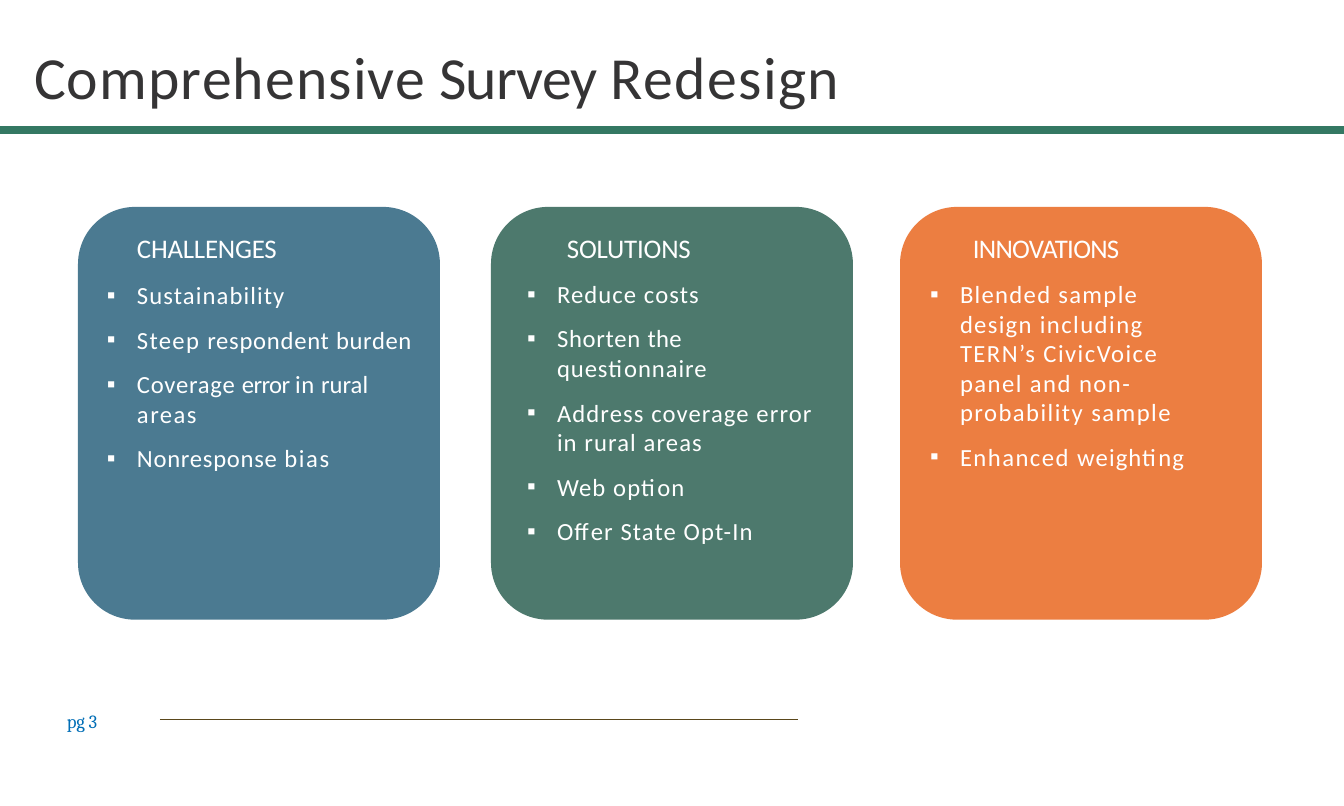
from dataclasses import dataclass

from lxml import etree
from pptx import Presentation
from pptx import util as u
from pptx.dml.color import RGBColor
from pptx.enum import shapes, text
from pptx.oxml.ns import qn


@dataclass(frozen=True)
class Theme:
    font: str = "Calibri"
    page_font: str = "Cambria"
    title_size: float = 32
    heading_size: float = 14.4
    list_size: float = 13.2
    page_size: float = 10
    ink: str = "353435"
    white: str = "FFFFFF"
    page: str = "006EB6"
    rule: str = "347863"
    footer: str = "5A471B"
    blue: str = "4B7A91"
    green: str = "4D796D"
    orange: str = "EB702D"


THEME = Theme()
PX = 914400 / 134.4
CARD_W, CARD_H, CARD_TOP, RADIUS = 362, 413, 207, 57
HEADING_TOP, LIST_TOP = 231, 278
INDENT, HANGING = 31, 30

TITLE = [("Comprehensive", 0.6), (" Survey ", -0.5), ("Redesign", 0.8)]

# Each text is a list of (words, letter spacing in points)
CARDS = [
    dict(left=78, color=THEME.blue, opacity=100,
         heading=[("CHALLENGES", -0.1)], heading_left=137,
         list_left=106, list_width=316, list_top=LIST_TOP + 1, items=[
             [("Sustainability", 0.6)],
             [("Steep ", 0.7), ("respondent ", 0.4), ("burden", 0.3)],
             [("Coverage ", 0.4), ("error ", -0.3), ("in ", 0.3),
              ("rural ", 0), ("areas", 0.8)],
             [("Nonresponse ", 0.4), ("bias", 0.9)]]),
    dict(left=491, color=THEME.green, opacity=100,
         heading=[("SOLUTIONS", -0.1)], heading_left=567,
         list_left=526, list_width=311, list_top=LIST_TOP, items=[
             [("Reduce costs", 0.6)],
             [("Shorten ", 0.4), ("the ", 0.2), ("questionnaire", 0.5)],
             [("Address coverage error in rural areas", 0.6)],
             [("Web option", 0.6)],
             [("Offer State Opt-In", 0.6)]]),
    dict(left=900, color=THEME.orange, opacity=90,
         heading=[("INNOVATIONS", -0.4)], heading_left=973,
         list_left=929, list_width=289, list_top=LIST_TOP, items=[
             [("Blended sample design ", 0.7),
              ("including TERN’s CivicVoice panel and non-probability sample",
               0.8)],
             [("Enhanced ", 0.8), ("weighting", 0.6)]]),
]


def px(n):
    return u.Emu(round(n * PX))


class SlideBuilder:
    def __init__(self, slide, theme):
        self.s = slide
        self.theme = theme
        self.bodies = [ph for ph in slide.placeholders
                       if ph.placeholder_format.idx > 0]

    def place(self, sp, x, y, w, h):
        sp.left, sp.top, sp.width, sp.height = map(px, (x, y, w, h))
        tf = sp.text_frame
        tf.word_wrap = True
        tf.auto_size = text.MSO_AUTO_SIZE.NONE
        tf.vertical_anchor = text.MSO_ANCHOR.TOP
        tf.margin_left = tf.margin_right = tf.margin_bottom = 0
        tf.margin_top = px(1)
        return tf

    def add_runs(self, p, runs, size, color, font=None):
        p.alignment = text.PP_ALIGN.LEFT
        p.space_before = u.Pt(0)
        for words, spacing in runs:
            r = p.add_run()
            r.text = words
            r.font.name = font or self.theme.font
            r.font.size = u.Pt(size)
            r.font.bold = False
            r.font.color.rgb = RGBColor.from_string(color)
            r._r.get_or_add_rPr().set("spc", str(round(spacing * 100)))

    def title(self, runs, x, y, w, h):
        p = self.place(self.s.shapes.title, x, y, w, h).paragraphs[0]
        p.line_spacing = 0.9
        self.add_runs(p, runs, self.theme.title_size, self.theme.ink)

    def label(self, runs, x, y, w, h, size, color, font=None):
        sp = self.s.shapes.add_textbox(0, 0, 0, 0)
        tf = self.place(sp, x, y, w, h)
        self.add_runs(tf.paragraphs[0], runs, size, color, font)

    def bullets(self, items, x, y, w, h):
        sp = self.bodies.pop(0)
        sp.element.getparent().append(sp.element)  # in front of its card
        tf = self.place(sp, x, y, w, h)
        for i, runs in enumerate(items):
            p = tf.paragraphs[0] if i == 0 else tf.add_paragraph()
            pPr = p._p.get_or_add_pPr()
            pPr.set("marL", str(px(INDENT)))
            pPr.set("indent", str(-px(HANGING)))
            etree.SubElement(pPr, qn("a:buChar")).set("char", "▪")
            p.line_spacing = 1.0
            p.space_after = u.Pt(8)
            self.add_runs(p, runs, self.theme.list_size, self.theme.white)

    def card(self, x, y, w, h, color, opacity):
        sp = self.s.shapes.add_shape(shapes.MSO_SHAPE.ROUNDED_RECTANGLE,
                                     px(x), px(y), px(w), px(h))
        sp.adjustments[0] = RADIUS / min(w, h)
        sp.shadow.inherit = False
        sp.fill.solid()
        sp.fill.fore_color.rgb = RGBColor.from_string(color)
        sp.line.fill.background()
        if opacity < 100:
            clr = sp.element.spPr.find(".//" + qn("a:srgbClr"))
            etree.SubElement(clr, qn("a:alpha")).set("val", str(opacity * 1000))

    def rule(self, x1, x2, y, color, weight):
        c = self.s.shapes.add_connector(shapes.MSO_CONNECTOR.STRAIGHT,
                                        px(x1), px(y), px(x2), px(y))
        c.line.color.rgb = RGBColor.from_string(color)
        c.line.width = u.Pt(weight)
        etree.SubElement(c.element.spPr, qn("a:effectLst"))

    def remove_unused(self):
        for ph in self.bodies:
            ph.element.getparent().remove(ph.element)


def main():
    prs = Presentation()
    prs.slide_width, prs.slide_height = u.Inches(10), u.Inches(6)
    # The Comparison layout offers enough body placeholders for three lists
    s = prs.slides.add_slide(prs.slide_layouts[4])
    b = SlideBuilder(s, THEME)

    # Header
    b.title(TITLE, 34, 47, 1214, 67)
    b.rule(0, 1344, 130, THEME.rule, 4.5)

    # Cards
    for c in CARDS:
        b.card(c["left"], CARD_TOP, CARD_W, CARD_H, c["color"], c["opacity"])
        b.label(c["heading"], c["heading_left"], HEADING_TOP, 180, 34,
                THEME.heading_size, THEME.white)
        b.bullets(c["items"], c["list_left"], c["list_top"],
                  c["list_width"], 245)
    b.remove_unused()

    # Footer
    b.rule(160, 798, 720, THEME.footer, 0.5)
    b.label([("pg 3", -0.1)], 67, 709, 93, 26,
            THEME.page_size, THEME.page, THEME.page_font)

    prs.save("out.pptx")


if __name__ == "__main__":
    main()
